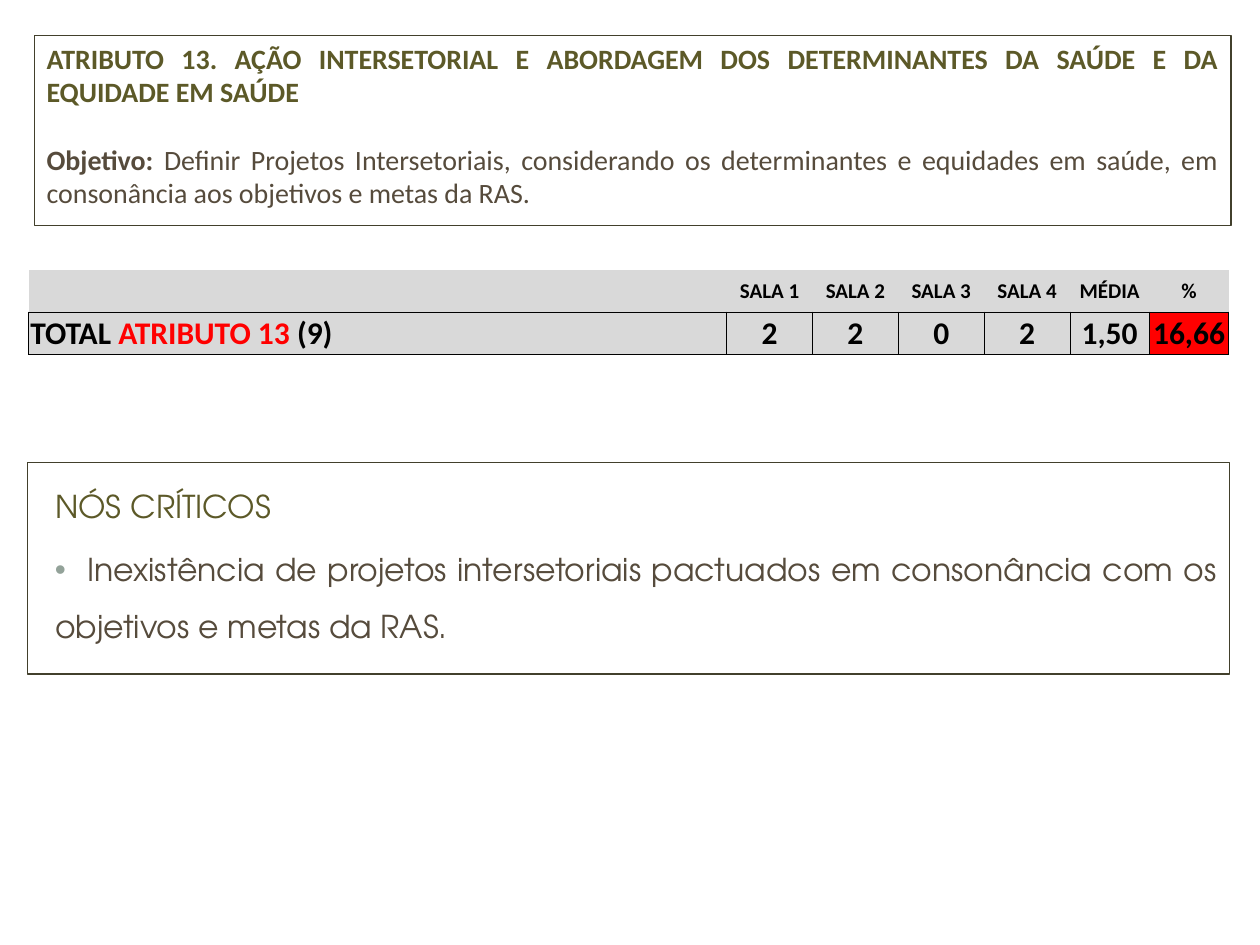
from lxml import etree
from pptx import Presentation, util as u
from pptx.dml import color
from pptx.enum import shapes, text
from pptx.oxml import ns

OLIVE, BROWN, FRAME = "5C5928", "564B3C", "42402C"
BLACK, WHITE, GREY, RED, BULLET = "000000", "FFFFFF", "D9D9D9", "FF0000", "93A299"
BODY, HEADING = "Calibri", "TeX Gyre Adventor"
NO_STYLE = "{2D5ABB26-0587-4C30-8999-92F81FD0307C}"
SCORES = [("SALA 1", "2"), ("SALA 2", "2"), ("SALA 3", "0"), ("SALA 4", "2"),
          ("MÉDIA", "1,50"), ("%", "16,66")]
COLUMNS = [10.11, 1.57, 2.39] + [1.73] * 4 + [1.6] * 2


def rgb(value):
    """Turn a hex string into a colour."""
    return color.RGBColor.from_string(value)


def apply(target, values):
    """Set each named format value on the target."""
    for name, value in values.items():
        setattr(target, name, value)


def child(parent, tag, **attributes):
    """Append a DrawingML element to the parent."""
    return etree.SubElement(parent, ns.qn(f"a:{tag}"), attributes)


def write(paragraph, runs, font, size):
    """Add (wording, colour, bold) runs to a paragraph."""
    for wording, ink, bold in runs:
        run = paragraph.add_run()
        run.text = wording
        apply(run.font, {"name": font, "size": u.Pt(size), "bold": bold})
        run.font.color.rgb = rgb(ink)


def framed_box(slide, box, paragraphs, font, size, layout):
    """Draw a thin-framed white box and return its justified paragraphs."""
    panel = slide.shapes.add_shape(shapes.MSO_SHAPE.RECTANGLE, *map(u.Cm, box))
    panel.shadow.inherit = False
    panel.fill.solid()
    panel.fill.fore_color.rgb = rgb(WHITE)
    panel.line.color.rgb = rgb(FRAME)
    panel.line.width = u.Pt(0.75)
    frame = panel.text_frame
    apply(frame, {"word_wrap": True, "vertical_anchor": text.MSO_ANCHOR.TOP})
    for index, runs in enumerate(paragraphs):
        paragraph = frame.add_paragraph() if index else frame.paragraphs[0]
        apply(paragraph, {"alignment": text.PP_ALIGN.JUSTIFY, **layout})
        write(paragraph, runs, font, size)
    return frame.paragraphs


def objective(slide, box):
    """Place the attribute heading and its objective."""
    heading = "ATRIBUTO 13. AÇÃO INTERSETORIAL E ABORDAGEM DOS DETERMINANTES DA SAÚDE E DA EQUIDADE EM SAÚDE"
    goal = ("Definir Projetos Intersetoriais, considerando os determinantes e equidades em saúde, "
            "em consonância aos objetivos e metas da RAS.")
    title, aim = framed_box(slide, box, [
        [(heading, OLIVE, True)],
        [("Objetivo: ", BROWN, True), (goal, BROWN, False)],
    ], BODY, 16, {})
    aim.space_before = u.Pt(19.2)


def critical_nodes(slide, box):
    """Place the critical nodes heading and its bulleted finding."""
    finding = "Inexistência de projetos intersetoriais pactuados em consonância com os objetivos e metas da RAS."
    title, node = framed_box(slide, box, [
        [("NÓS CRÍTICOS", OLIVE, False)],
        [("\t" + finding, BROWN, False)],
    ], HEADING, 18, {"line_spacing": 1.5, "space_before": u.Pt(3.6)})
    for paragraph in (title, node):
        apply_indent = paragraph._p.get_or_add_pPr()
        apply_indent.set("marL", str(u.Cm(0.3)))
        apply_indent.set("indent", "0")
    properties = node._p.get_or_add_pPr()
    child(child(properties, "buClr"), "srgbClr", val=BULLET)
    child(properties, "buFont", typeface="Arial")
    child(properties, "buChar", char="•")
    child(child(properties, "tabLst"), "tab", pos=str(u.Cm(0.95)), algn="l")


def border(cell, sides):
    """Draw thin black borders on the given sides of a cell."""
    properties = cell._tc.get_or_add_tcPr()
    for index, side in enumerate(sides):
        line = child(properties, f"ln{side}", w=str(u.Pt(0.5)))
        child(child(line, "solidFill"), "srgbClr", val=BLACK)
        properties.insert(index, line)


def fill_cell(cell, runs, size, back, align, sides):
    """Format one table cell and write its runs."""
    apply(cell, {"margin_left": u.Cm(0.03), "margin_right": u.Cm(0.03),
                 "margin_top": u.Cm(0.03), "margin_bottom": 0,
                 "vertical_anchor": text.MSO_ANCHOR.MIDDLE})
    cell.fill.solid()
    cell.fill.fore_color.rgb = rgb(back)
    border(cell, sides)
    paragraph = cell.text_frame.paragraphs[0]
    paragraph.alignment = align
    write(paragraph, runs, BODY, size)


def score_table(slide, box):
    """Place the table of scores for each room."""
    table = slide.shapes.add_table(2, len(COLUMNS), *map(u.Cm, box)).table
    apply(table, {"first_row": False, "horz_banding": False})
    table._tbl.tblPr.find(ns.qn("a:tableStyleId")).text = NO_STYLE
    for column, width in zip(table.columns, COLUMNS):
        column.width = u.Cm(width)
    for row in table.rows:
        row.height = u.Cm(box[3] / 2)
    left, center = text.PP_ALIGN.LEFT, text.PP_ALIGN.CENTER
    lead = len(COLUMNS) - len(SCORES)
    total = [("TOTAL ", BLACK, True), ("ATRIBUTO 13 ", RED, True), ("(9)", BLACK, True)]
    for index in range(lead):
        fill_cell(table.cell(0, index), [], 12, GREY, left, "B")
        fill_cell(table.cell(1, index), [] if index else total, 18, GREY, left, "LRTB")
    table.cell(1, 0).merge(table.cell(1, lead - 1))
    for index, (label, score) in enumerate(SCORES, lead):
        back = RED if label == "%" else GREY
        fill_cell(table.cell(0, index), [(label, BLACK, True)], 12, GREY, center, "B")
        fill_cell(table.cell(1, index), [(score, BLACK, True)], 18, back, center, "LRTB")


def main():
    """Build the slide and save it."""
    deck = Presentation()
    apply(deck, {"slide_width": u.Cm(25.4), "slide_height": u.Cm(19.05)})
    slide = deck.slides.add_slide(deck.slide_layouts[6])
    objective(slide, (0.69, 0.71, 24.13, 3.84))
    critical_nodes(slide, (0.56, 9.32, 24.23, 4.27))
    score_table(slide, (0.58, 5.44, sum(COLUMNS), 1.7))
    deck.save("out.pptx")


if __name__ == "__main__":
    main()
